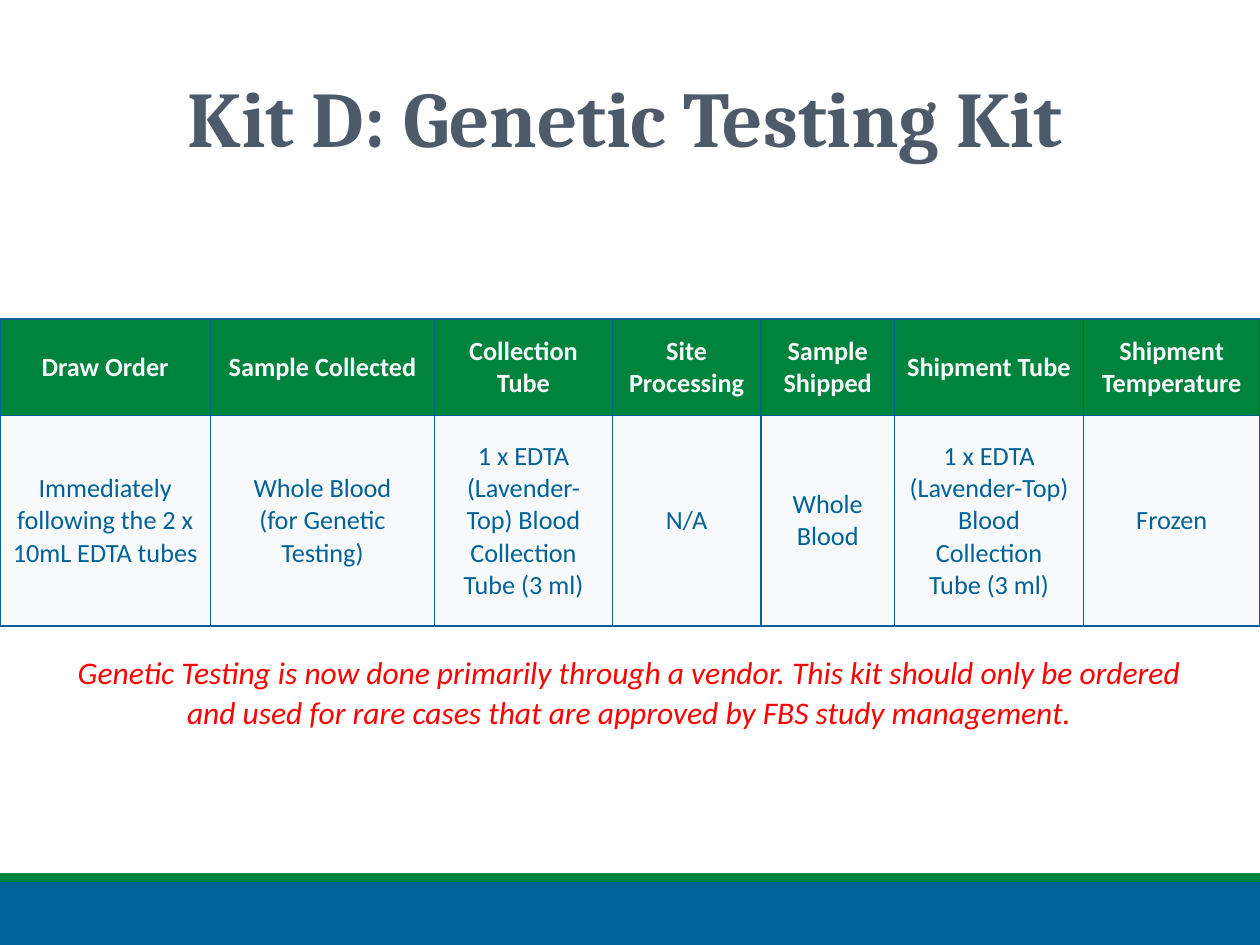
from dataclasses import dataclass

from lxml import etree
from pptx import Presentation
from pptx.dml.color import RGBColor
from pptx.enum.shapes import MSO_SHAPE
from pptx.enum.text import MSO_ANCHOR, PP_ALIGN
from pptx.oxml.ns import qn
from pptx.util import Inches, Pt

RECTANGLE = MSO_SHAPE.RECTANGLE
MIDDLE = MSO_ANCHOR.MIDDLE
CENTER = PP_ALIGN.CENTER
TITLE_ONLY_LAYOUT = 5
SLIDE_WIDTH, SLIDE_HEIGHT = 10, 7.5


@dataclass(frozen=True)
class Theme:
    blue: str = "006298"
    green: str = "00843D"
    slate: str = "4D5A69"
    pale: str = "F8F9FA"
    red: str = "FF0000"
    heading_font: str = "Cambria"
    body_font: str = "Calibri"
    title_size: float = 45
    note_size: float = 18
    table_size: float = 15
    border_width: float = 1


@dataclass(frozen=True)
class Column:
    width: float
    header: str
    lines: tuple[str, ...]


@dataclass(frozen=True)
class Band:
    top: float
    height: float
    color: str


THEME = Theme()
EDTA_TUBE = ("1 x EDTA (Lavender-Top) Blood", "Collection Tube (3 ml)")
COLUMNS = (
    Column(1.67, "Draw Order", ("Immediately following the 2 x 10mL EDTA tubes",)),
    Column(1.78, "Sample Collected", ("Whole Blood", "(for Genetic Testing)")),
    Column(1.41, "Collection Tube", EDTA_TUBE),
    Column(1.18, "Site Processing", ("N/A",)),
    Column(1.06, "Sample Shipped", ("Whole Blood",)),
    Column(1.5, "Shipment Tube", EDTA_TUBE),
    Column(1.4, "Shipment Temperature", ("Frozen",)),
)
ROW_HEIGHTS = (0.77, 1.67)
TABLE_TOP = 2.53
FOOTER_BANDS = (Band(7, 0.5, THEME.blue), Band(6.93, 0.07, THEME.green))
NOTE = (
    "Genetic Testing is now done primarily through a vendor. This kit should only "
    "be ordered and used for rare cases that are approved by FBS study management."
)


def write_text(text_frame, lines, *, size: float, color: str,
               font: str = THEME.body_font, bold: bool = False,
               italic: bool = False, line_spacing: float = 1) -> None:
    text_frame.word_wrap = True
    for index, line in enumerate(lines):
        paragraph = text_frame.paragraphs[0] if index == 0 else text_frame.add_paragraph()
        paragraph.alignment = CENTER
        paragraph.line_spacing = line_spacing
        run = paragraph.add_run()
        run.text = line
        run.font.name = font
        run.font.size = Pt(size)
        run.font.bold = bold
        run.font.italic = italic
        run.font.color.rgb = RGBColor.from_string(color)


def add_band(slide, band: Band) -> None:
    shape = slide.shapes.add_shape(RECTANGLE, 0, Inches(band.top),
                                   Inches(SLIDE_WIDTH), Inches(band.height))
    shape.shadow.inherit = False
    shape.fill.solid()
    shape.fill.fore_color.rgb = RGBColor.from_string(band.color)
    shape.line.fill.background()


def fill_cell(cell, lines: tuple[str, ...], fill: str, color: str, bold: bool) -> None:
    write_text(cell.text_frame, lines, size=THEME.table_size, color=color, bold=bold)
    cell.vertical_anchor = MIDDLE
    properties = cell._tc.get_or_add_tcPr()
    for side in ("lnL", "lnR", "lnT", "lnB"):
        border = etree.SubElement(properties, qn(f"a:{side}"),
                                  w=str(Pt(THEME.border_width)))
        solid = etree.SubElement(border, qn("a:solidFill"))
        etree.SubElement(solid, qn("a:srgbClr"), val=THEME.blue)
    cell.fill.solid()
    cell.fill.fore_color.rgb = RGBColor.from_string(fill)


def add_kit_table(slide) -> None:
    table = slide.shapes.add_table(
        len(ROW_HEIGHTS), len(COLUMNS), 0, Inches(TABLE_TOP),
        Inches(SLIDE_WIDTH), Inches(sum(ROW_HEIGHTS))).table
    for row, height in zip(table.rows, ROW_HEIGHTS):
        row.height = Inches(height)
    for index, column in enumerate(COLUMNS):
        table.columns[index].width = Inches(column.width)
        fill_cell(table.cell(0, index), (column.header,), THEME.green, THEME.pale, True)
        fill_cell(table.cell(1, index), column.lines, THEME.pale, THEME.blue, False)


def add_title(slide) -> None:
    title = slide.shapes.title
    title.left, title.top = Inches(0.46), Inches(0.34)
    title.width, title.height = Inches(9), Inches(1.25)
    title.text_frame.vertical_anchor = MIDDLE
    write_text(title.text_frame, ("Kit D: Genetic Testing Kit",), size=THEME.title_size,
               color=THEME.slate, font=THEME.heading_font, bold=True, line_spacing=0.9)


def add_note(slide) -> None:
    note = slide.shapes.add_textbox(Inches(0.41), Inches(5.11), Inches(9.17), Inches(0.73))
    write_text(note.text_frame, (NOTE,), size=THEME.note_size, color=THEME.red,
               italic=True, line_spacing=1.07)


def main() -> None:
    presentation = Presentation()
    presentation.slide_width = Inches(SLIDE_WIDTH)
    presentation.slide_height = Inches(SLIDE_HEIGHT)
    slide = presentation.slides.add_slide(presentation.slide_layouts[TITLE_ONLY_LAYOUT])
    for band in FOOTER_BANDS:
        add_band(slide, band)
    add_title(slide)
    add_kit_table(slide)
    add_note(slide)
    presentation.save("out.pptx")


if __name__ == "__main__":
    main()
